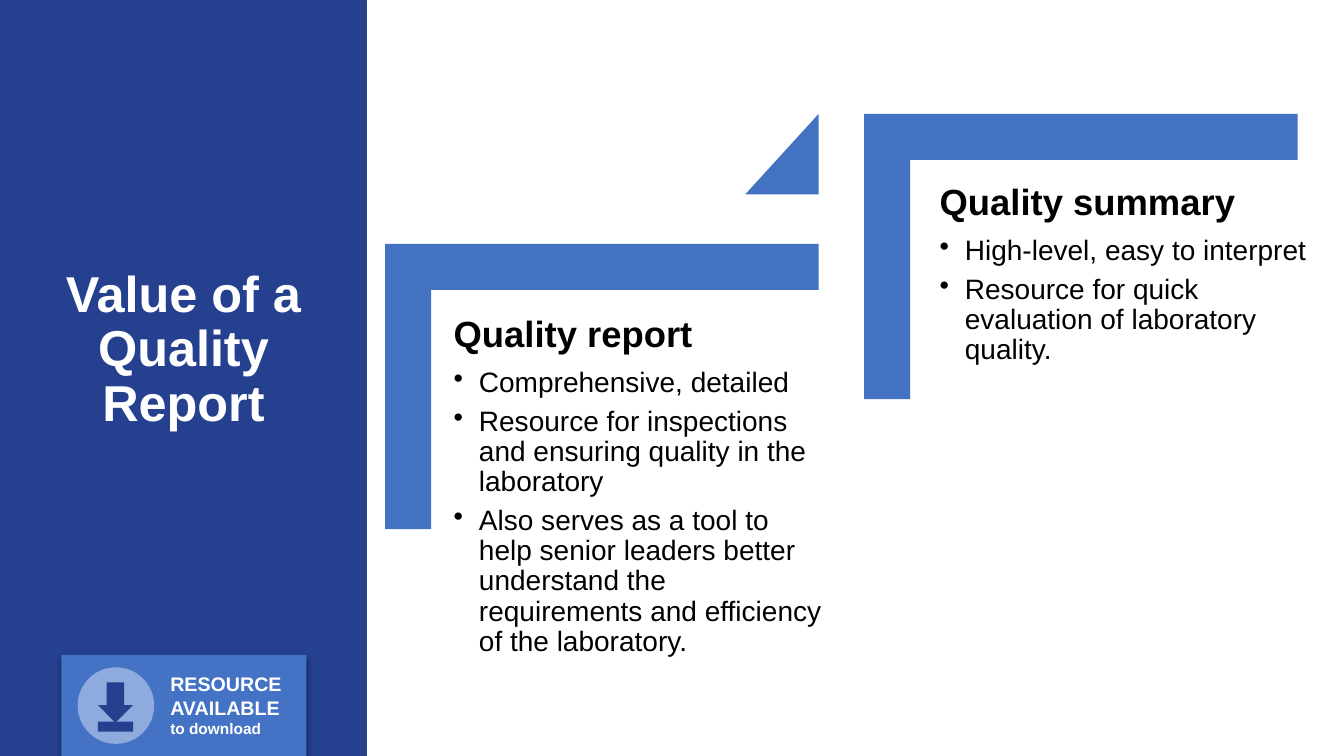
from dataclasses import dataclass

from lxml import etree
from pptx import Presentation
from pptx.dml.color import RGBColor
from pptx.enum.shapes import MSO_SHAPE as Shape
from pptx.enum.text import MSO_ANCHOR as Anchor, MSO_AUTO_SIZE as AutoSize, PP_ALIGN as Align
from pptx.oxml import parse_xml
from pptx.oxml.ns import nsdecls, qn
from pptx.util import Inches, Pt


@dataclass(frozen=True)
class Theme:
    """Colours, type sizes and font of the slide."""
    font: str = "Arial"
    sidebar: str = "25408F"
    bracket: str = "4372C3"
    badge: str = "4472C4"
    disc: str = "8FAADC"
    icon: str = "26408F"
    light: str = "FFFFFF"
    dark: str = "000000"
    title: int = 36
    heading: int = 26
    body: int = 20
    label: int = 14
    small: int = 11


THEME = Theme()

PANELS = [
    ((3.82, 2.42), (4.39, 3.03), "Quality report", [
        "Comprehensive, detailed",
        "Resource for inspections and ensuring quality in the laboratory",
        "Also serves as a tool to help senior leaders better understand the "
        "requirements and efficiency of the laboratory."]),
    ((8.57, 1.13), (9.21, 1.72), "Quality summary", [
        "High-level, easy to interpret",
        "Resource for quick evaluation of laboratory quality."]),
]


def style(font, size, color, bold=False):
    """Set face, size, colour and weight of a font."""
    font.name, font.size, font.bold = THEME.font, Pt(size), bold
    font.color.rgb = RGBColor.from_string(color)


def add_block(shapes, kind, left, top, width, height, color):
    """Add a flat preset shape without outline or shadow."""
    block = shapes.add_shape(kind, Inches(left), Inches(top), Inches(width), Inches(height))
    block.shadow.inherit = False
    block.fill.solid()
    block.fill.fore_color.rgb = RGBColor.from_string(color)
    block.line.fill.background()
    return block


def add_text_box(shapes, left, top, width, height):
    """Add a wrapping text box and return its frame."""
    box = shapes.add_textbox(Inches(left), Inches(top), Inches(width), Inches(height))
    box.text_frame.word_wrap = True
    return box.text_frame


def add_bullet(para):
    """Give a paragraph a hanging round bullet."""
    props = para._p.get_or_add_pPr()
    props.set("lvl", "1")
    props.set("marL", str(Inches(0.25)))
    props.set("indent", str(-Inches(0.25)))
    etree.SubElement(props, qn("a:buChar")).set("char", "•")


def add_sidebar(page, width, height):
    """Place the coloured sidebar behind the slide title."""
    title = page.shapes.title
    sidebar = add_block(page.shapes, Shape.RECTANGLE, 0, 0, width, height, THEME.sidebar)
    title.element.addprevious(sidebar.element)
    title.left, title.top = Inches(0.25), Inches(2.75)
    title.width, title.height = Inches(width - 0.5), Inches(1.45)
    frame = title.text_frame
    frame.text = "Value of a Quality Report"
    frame.word_wrap = True
    frame.auto_size = AutoSize.NONE
    frame.vertical_anchor = Anchor.MIDDLE
    para = frame.paragraphs[0]
    para.alignment, para.line_spacing = Align.CENTER, 0.9
    style(para.font, THEME.title, THEME.light, True)


def add_bracket(shapes, left, top, width=4.3, height=2.83):
    """Add a corner bracket turned so that it opens to the lower right."""
    shift = (width - height) / 2
    bracket = add_block(shapes, Shape.RECTANGLE, left + shift, top - shift,
                        height, width, THEME.bracket)
    bracket.rotation = 90
    geometry = bracket.element.spPr.find(qn("a:prstGeom"))
    geometry.set("prst", "corner")
    for name in ("adj1", "adj2"):
        guide = etree.SubElement(geometry.find(qn("a:avLst")), qn("a:gd"))
        guide.set("name", name)
        guide.set("fmla", "val 16100")


def add_panel(shapes, corner, origin, heading, points):
    """Add a bracket and its heading with bullet points."""
    add_bracket(shapes, *corner)
    frame = add_text_box(shapes, *origin, 3.88, 3.73)
    frame.margin_left = frame.margin_right = Inches(0.11)
    frame.margin_top = frame.margin_bottom = Inches(0.11)
    para = frame.paragraphs[0]
    para.text, para.alignment, para.line_spacing = heading, Align.JUSTIFY, 0.9
    style(para.font, THEME.heading, THEME.dark, True)
    for index, point in enumerate(points):
        para = frame.add_paragraph()
        para.text, para.line_spacing = point, 0.9
        para.space_before = Pt(6 if index else 9.1)
        if index == len(points) - 1:
            para.space_after = Pt(3)
        add_bullet(para)
        style(para.font, THEME.body, THEME.dark)


def add_shadow(shape):
    """Give a shape a soft shadow straight below it."""
    props = shape.element.spPr
    props.remove(props.find(qn("a:effectLst")))
    props.append(parse_xml(
        f'<a:effectLst {nsdecls("a")}><a:outerShdw blurRad="{Pt(4)}" dist="{Pt(3)}" '
        'dir="5400000" algn="t" rotWithShape="0"><a:srgbClr val="000000">'
        '<a:alpha val="40000"/></a:srgbClr></a:outerShdw></a:effectLst>'))


def add_badge(page, left, top):
    """Add the download badge with its label and icon."""
    shapes = page.shapes.add_group_shape().shapes
    add_shadow(add_block(shapes, Shape.RECTANGLE, left, top, 2.43, 1, THEME.badge))
    frame = add_text_box(shapes, left + 0.98, top + 0.12, 1.35, 0.76)
    para = frame.paragraphs[0]
    for text, size in (("RESOURCE AVAILABLE", THEME.label), ("to download", THEME.small)):
        if para.runs:
            para.add_line_break()
        span = para.add_run()
        span.text = text
        style(span.font, size, THEME.light, True)
    add_block(shapes, Shape.OVAL, left + 0.16, top + 0.12, 0.76, 0.76, THEME.disc)
    add_block(shapes, Shape.DOWN_ARROW, left + 0.36, top + 0.27, 0.35, 0.4, THEME.icon)
    add_block(shapes, Shape.RECTANGLE, left + 0.36, top + 0.66, 0.35, 0.1, THEME.icon)


def main():
    """Build and save the slide."""
    deck = Presentation()
    deck.slide_width, deck.slide_height = Inches(13.33), Inches(7.5)
    page = deck.slides.add_slide(deck.slide_layouts[5])
    add_sidebar(page, 3.64, 7.5)
    for panel in PANELS:
        add_panel(page.shapes, *panel)
    step = add_block(page.shapes, Shape.ISOSCELES_TRIANGLE, 7.39, 1.13, 0.73, 0.8, THEME.bracket)
    step.adjustments[0] = 1
    add_badge(page, 0.61, 6.5)
    deck.save("out.pptx")


if __name__ == "__main__":
    main()
